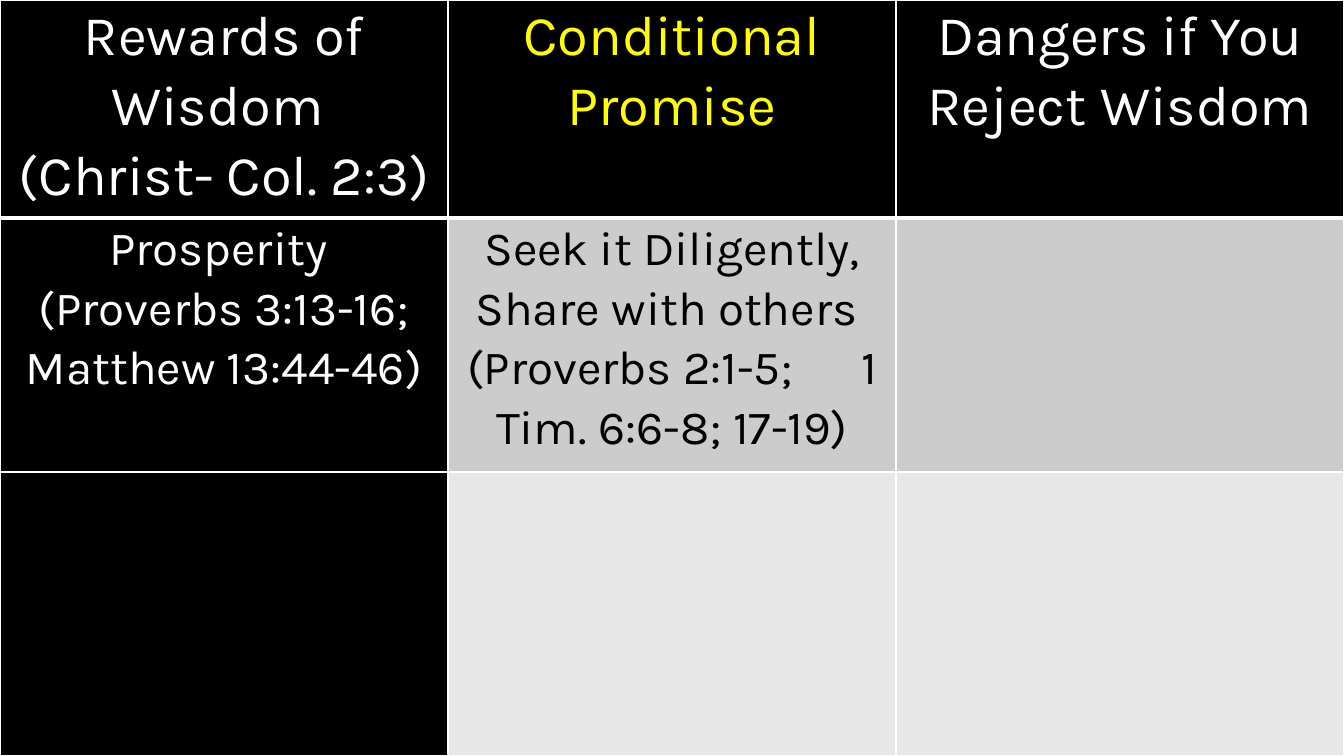
from lxml import etree
from pptx import Presentation
from pptx.dml.color import RGBColor
from pptx.enum.text import PP_ALIGN
from pptx.oxml.ns import qn
from pptx.util import Emu, Pt

CENTER = PP_ALIGN.CENTER
FONT = "Karla"
BLACK, WHITE, YELLOW = "000000", "FFFFFF", "FFFF00"
MID_GRAY, LIGHT_GRAY = "CCCCCC", "E7E7E7"

# Each cell: paragraphs, text colour, fill
ROWS = [
    {"height": 218, "size": 40, "top": 1, "bottom": 3, "cells": [
        (["Rewards of Wisdom ", "(Christ- Col. 2:3)"], WHITE, BLACK),
        (["Conditional Promise"], YELLOW, BLACK),
        (["Dangers if You Reject Wisdom"], WHITE, BLACK),
    ]},
    {"height": 254, "size": 34, "top": 3, "bottom": 1, "cells": [
        (["Prosperity ", "(Proverbs 3:13-16; Matthew 13:44-46)"], WHITE, BLACK),
        (["Seek it Diligently, Share with others ",
          "(Proverbs 2:1-5;\t1 Tim. 6:6-8; 17-19)"], BLACK, MID_GRAY),
        ([], BLACK, MID_GRAY),
    ]},
    {"height": 284, "size": 34, "top": 1, "bottom": 1, "cells": [
        ([], WHITE, BLACK),
        ([], BLACK, LIGHT_GRAY),
        ([], BLACK, LIGHT_GRAY),
    ]},
]
WIDTH, HEIGHT = 1344, 756
COLUMNS = 3
SIDE_MARGIN = 7
TAB_STOP = 394


def px(length):
    return Emu(round(length * 914400 / 100.8))


def rgb(color):
    return RGBColor.from_string(color)


def add_tab_stop(para, position):
    tabs = etree.SubElement(para._p.get_or_add_pPr(), qn("a:tabLst"))
    etree.SubElement(tabs, qn("a:tab"), pos=str(px(position)), algn="l")


def set_borders(cell, color, **widths):
    """Draw the cell's four edges; widths are points keyed by side."""
    properties = cell._tc.get_or_add_tcPr()
    for index, side in enumerate("LRTB"):
        line = etree.Element(qn(f"a:ln{side}"), w=str(Pt(widths[side])))
        fill = etree.SubElement(line, qn("a:solidFill"))
        etree.SubElement(fill, qn("a:srgbClr"), val=color)
        properties.insert(index, line)


def write(cell, paragraphs, *, size, color):
    frame = cell.text_frame
    for index, text in enumerate(paragraphs):
        para = frame.add_paragraph() if index else frame.paragraphs[0]
        para.alignment = CENTER
        para.line_spacing = 1.07
        if "\t" in text:
            add_tab_stop(para, TAB_STOP)
        span = para.add_run()
        span.text = text
        span.font.name = FONT
        span.font.size = Pt(size)
        span.font.color.rgb = rgb(color)


def main():
    deck = Presentation()
    deck.slide_width, deck.slide_height = px(WIDTH), px(HEIGHT)
    page = deck.slides.add_slide(deck.slide_layouts[6])
    page.background.fill.solid()
    page.background.fill.fore_color.rgb = rgb(BLACK)

    table = page.shapes.add_table(
        len(ROWS), COLUMNS, 0, 0, px(WIDTH), px(HEIGHT)).table
    for column in table.columns:
        column.width = px(WIDTH / COLUMNS)
    for row_index, row in enumerate(ROWS):
        table.rows[row_index].height = px(row["height"])
        for column_index, (paragraphs, color, fill) in enumerate(row["cells"]):
            cell = table.cell(row_index, column_index)
            cell.margin_left = cell.margin_right = px(SIDE_MARGIN)
            cell.margin_top = cell.margin_bottom = 0
            cell.fill.solid()
            cell.fill.fore_color.rgb = rgb(fill)
            set_borders(cell, WHITE, L=1, R=1, T=row["top"], B=row["bottom"])
            write(cell, paragraphs, size=row["size"], color=color)
    deck.save("out.pptx")


if __name__ == "__main__":
    main()
